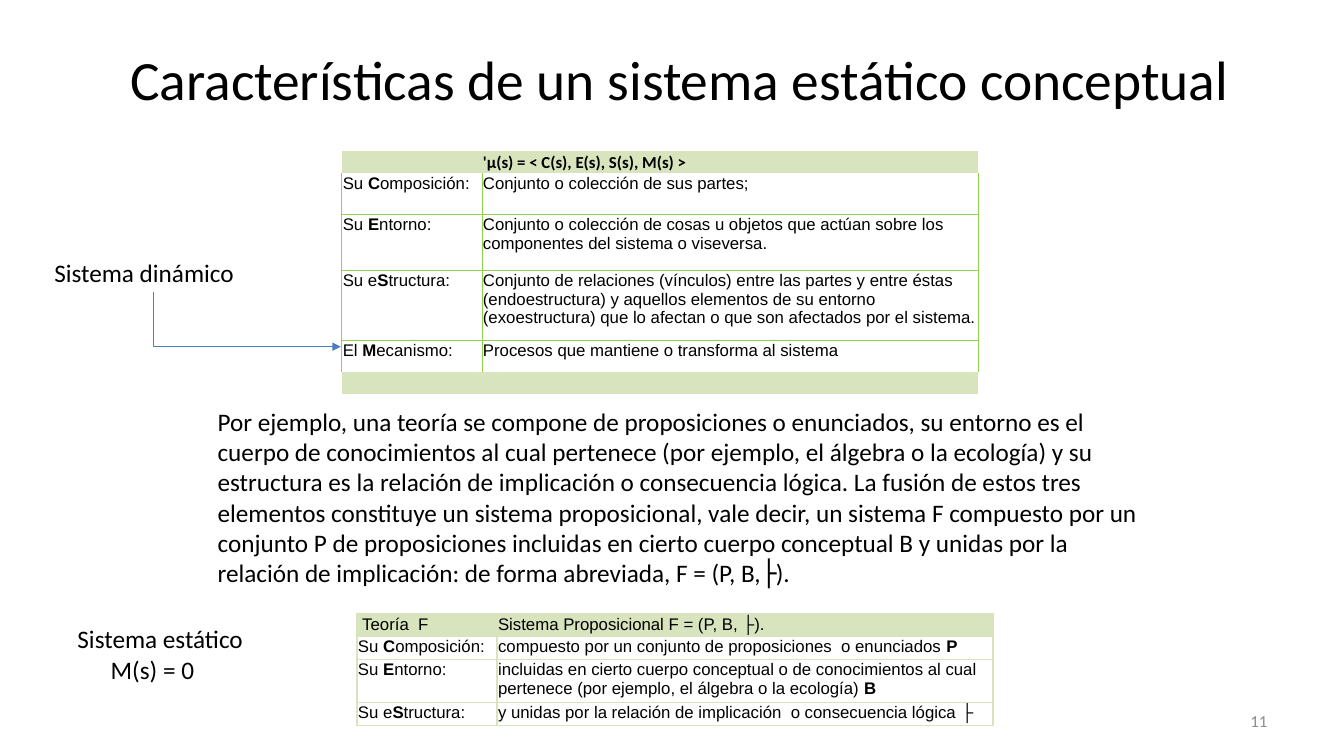
"""Builds the slide on the traits of a static conceptual system."""
import dataclasses
import typing

import lxml.etree
import pptx
import pptx.dml.color
import pptx.enum.dml
import pptx.enum.shapes
import pptx.enum.text
import pptx.oxml.ns
import pptx.util

EMU_PER_PX = 9144
BLACK = pptx.dml.color.RGBColor(0x00, 0x00, 0x00)
GREY = pptx.dml.color.RGBColor(0x8C, 0x8C, 0x8C)
BLUE = pptx.dml.color.RGBColor(0x4B, 0x7E, 0xBC)
GREEN = pptx.dml.color.RGBColor(0x92, 0xD0, 0x50)
PALE_GREEN = pptx.dml.color.RGBColor(0xD7, 0xE4, 0xBD)
MIDDLE = pptx.enum.text.MSO_ANCHOR.MIDDLE
TOP = pptx.enum.text.MSO_ANCHOR.TOP
LEFT = pptx.enum.text.PP_ALIGN.LEFT
CENTER = pptx.enum.text.PP_ALIGN.CENTER
RIGHT = pptx.enum.text.PP_ALIGN.RIGHT
COLUMNS = (139, 492)
SIDES = "LRTB"


@dataclasses.dataclass(frozen=True)
class Label:
    """A text block with its place in px."""

    text: str
    place: tuple[int, int, int, int]
    size: float = 18
    color: pptx.dml.color.RGBColor = BLACK
    align: typing.Any = LEFT
    anchor: typing.Any = TOP


@dataclasses.dataclass(frozen=True)
class Row:
    """A table row; asterisks in the text switch bold on and off."""

    height: int
    cells: tuple[str, ...]
    borders: str = SIDES
    filled: bool = False
    font: str = "Arial"


@dataclasses.dataclass(frozen=True)
class Grid:
    """A two-column table with its corner in px and its border."""

    left: int
    top: int
    border: pptx.dml.color.RGBColor
    border_width: float
    rows: tuple[Row, ...]


TITLE = Label("Características de un sistema estático conceptual", (74, 15, 1200, 125),
              size=39.6, align=CENTER, anchor=MIDDLE)
LABELS = (
    Label("Por ejemplo, una teoría se compone de proposiciones o enunciados, su entorno es el "
          "cuerpo de conocimientos al cual pertenece (por ejemplo, el álgebra o la ecología) y su "
          "estructura es la relación de implicación o consecuencia lógica. La fusión de estos tres "
          "elementos constituye un sistema proposicional, vale decir, un sistema F compuesto por un "
          "conjunto P de proposiciones incluidas en cierto cuerpo conceptual B y unidas por la "
          "relación de implicación: de forma abreviada, F = (P, B,├).", (206, 398, 938, 192)),
    Label("Sistema estático", (67, 613, 193, 40)),
    Label("Sistema dinámico", (44, 250, 216, 40)),
    Label("M(s) = 0", (100, 644, 104, 40)),
    Label("11", (956, 695, 311, 40), size=12, color=GREY, align=RIGHT, anchor=MIDDLE),
)
GRIDS = (
    Grid(339, 150, GREEN, 0.5, (
        Row(22, ("", "*'μ(s) = < C(s), E(s), S(s), M(s) >*"), "", True, "Calibri"),
        Row(41, ("Su *C*omposición:", "Conjunto o colección de sus partes;"), "LRB"),
        Row(55, ("Su* E*ntorno:", "Conjunto o colección de cosas u objetos que actúan sobre los "
                 "componentes del sistema o viseversa.")),
        Row(70, ("Su e*S*tructura:", "Conjunto de relaciones (vínculos) entre las partes y entre "
                 "éstas (endoestructura) y aquellos elementos de su entorno (exoestructura) que lo "
                 "afectan o que son afectados por el sistema.")),
        Row(31, ("El *M*ecanismo:", "Procesos que mantiene o transforma al sistema"), "LRT"),
        Row(22, ("",), "", True),
    )),
    Grid(354, 609, PALE_GREEN, 1, (
        Row(22, (" Teoría  F", "Sistema Proposicional F = (P, B, ├)."), filled=True),
        Row(23, ("Su *C*omposición:", "compuesto por un conjunto de proposiciones  o enunciados *P*")),
        Row(43, ("Su *E*ntorno:", "incluidas en cierto cuerpo conceptual o de conocimientos al cual "
                 "pertenece (por ejemplo, el álgebra o la ecología) *B*")),
        Row(23, ("Su e*S*tructura:", "y unidas por la relación de implicación  o consecuencia "
                 "lógica *├*")),
    )),
)


def px(length: int) -> pptx.util.Emu:
    """Turn px into EMU."""
    return pptx.util.Emu(length * EMU_PER_PX)


def apply(target: typing.Any, values: dict[str, typing.Any]) -> None:
    """Set each named attribute on the target."""
    for name, value in values.items():
        setattr(target, name, value)


def add_element(parent: typing.Any, tag: str, **attributes: str) -> typing.Any:
    """Append a DrawingML element to the parent."""
    return lxml.etree.SubElement(parent, pptx.oxml.ns.qn(tag), attributes)


def write_spans(para: typing.Any, text: str, font: str, size: float,
                color: pptx.dml.color.RGBColor) -> None:
    """Write text as runs, with bold between asterisks."""
    for index, part in enumerate(text.split("*")):
        if part:
            span = para.add_run()
            span.text = part
            apply(span.font, {"name": font, "size": pptx.util.Pt(size), "bold": index % 2 == 1})
            span.font.color.rgb = color


def fill_label(box: typing.Any, label: Label) -> None:
    """Place a text shape and write its label."""
    left, top, width, height = map(px, label.place)
    apply(box, {"left": left, "top": top, "width": width, "height": height})
    apply(box.text_frame, {"word_wrap": True, "vertical_anchor": label.anchor,
                           "auto_size": pptx.enum.text.MSO_AUTO_SIZE.NONE})
    para = box.text_frame.paragraphs[0]
    para.alignment = label.align
    write_spans(para, label.text, "Calibri", label.size, label.color)


def format_cell(cell: typing.Any, row: Row, grid: Grid) -> None:
    """Set a cell's margins, borders and fill."""
    apply(cell, {"margin_left": px(1), "margin_right": px(1), "margin_top": px(1),
                 "margin_bottom": px(0)})
    properties = cell._tc.get_or_add_tcPr()
    for side in SIDES:
        line = add_element(properties, f"a:ln{side}", w=str(pptx.util.Pt(grid.border_width)))
        if side in row.borders:
            fill = add_element(line, "a:solidFill")
            add_element(fill, "a:srgbClr", val=str(grid.border))
        else:
            add_element(line, "a:noFill")
    if row.filled:
        cell.fill.solid()
        cell.fill.fore_color.rgb = PALE_GREEN
    else:
        cell.fill.background()


def add_grid(page: typing.Any, grid: Grid) -> None:
    """Draw a table."""
    height = sum(row.height for row in grid.rows)
    table = page.shapes.add_table(len(grid.rows), len(COLUMNS), px(grid.left), px(grid.top),
                                  px(sum(COLUMNS)), px(height)).table
    apply(table, {"first_row": False, "horz_banding": False})
    for column, width in zip(table.columns, COLUMNS):
        column.width = px(width)
    for index, row in enumerate(grid.rows):
        table.rows[index].height = px(row.height)
        for cell in table.rows[index].cells:
            format_cell(cell, row, grid)
            add_element(cell.text_frame.paragraphs[0]._p, "a:endParaRPr", sz="1200")
        for cell, text in zip(table.rows[index].cells, row.cells):
            write_spans(cell.text_frame.paragraphs[0], text, row.font, 12, BLACK)
        if len(row.cells) == 1:
            table.cell(index, 0).merge(table.cell(index, len(COLUMNS) - 1))


def add_mechanism_arrow(page: typing.Any) -> None:
    """Draw the bent arrow from the dynamic system to its mechanism."""
    arrow = page.shapes.add_connector(pptx.enum.shapes.MSO_CONNECTOR.ELBOW,
                                      px(272), px(224), px(218), px(410))
    arrow.line.color.rgb = BLUE
    arrow.line.width = pptx.util.Pt(0.75)
    properties = arrow._element.spPr
    properties.find(pptx.oxml.ns.qn("a:xfrm")).set("rot", "16200000")
    properties.find(pptx.oxml.ns.qn("a:prstGeom")).set("prst", "bentConnector2")
    add_element(properties.find(pptx.oxml.ns.qn("a:ln")), "a:tailEnd", type="triangle")
    add_element(properties, "a:effectLst")


def main() -> None:
    """Build the deck and save it."""
    deck = pptx.Presentation()
    apply(deck, {"slide_width": px(1333), "slide_height": px(750)})
    page = deck.slides.add_slide(deck.slide_layouts[5])
    fill_label(page.shapes.title, TITLE)
    for grid in GRIDS:
        add_grid(page, grid)
    for label in LABELS:
        fill_label(page.shapes.add_textbox(0, 0, 0, 0), label)
    add_mechanism_arrow(page)
    deck.save("out.pptx")


if __name__ == "__main__":
    main()
